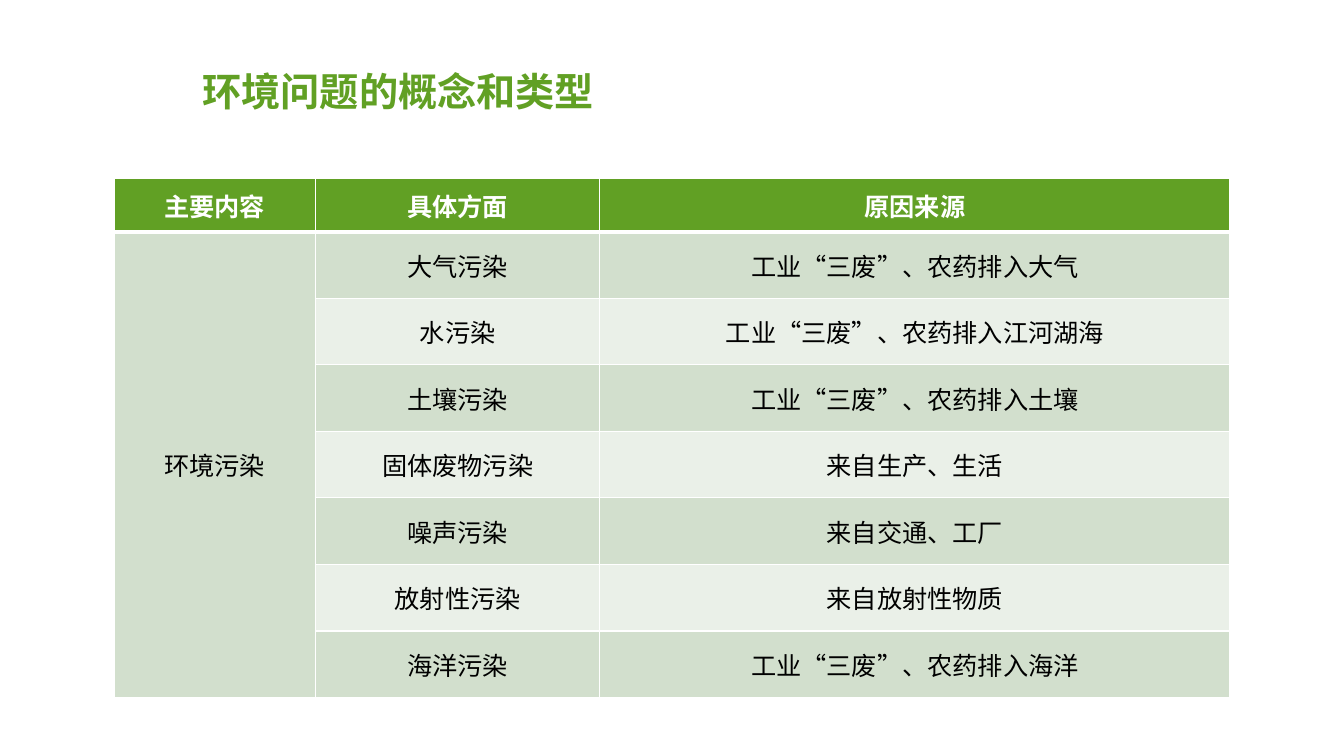
from dataclasses import dataclass

from lxml.etree import SubElement
from pptx import Presentation
from pptx.dml.color import RGBColor
from pptx.enum.text import MSO_ANCHOR, MSO_AUTO_SIZE, PP_ALIGN
from pptx.oxml.ns import qn
from pptx.slide import Slide
from pptx.table import Table, _Cell
from pptx.text.text import TextFrame
from pptx.util import Inches, Pt


@dataclass(frozen=True)
class Theme:
    font: str = "Arial"
    green: str = "61A024"
    white: str = "FFFFFF"
    black: str = "000000"
    dark: str = "D2DFCD"
    light: str = "EAF0E8"
    title: int = 28
    body: int = 18
    thin: int = 1
    thick: int = 3


@dataclass(frozen=True)
class Kind:
    name: str
    cause: str


THEME = Theme()
HEADS = ("主要内容", "具体方面", "原因来源")
GROUP = "环境污染"
KINDS = (
    Kind("大气污染", "工业“三废”、农药排入大气"),
    Kind("水污染", "工业“三废”、农药排入江河湖海"),
    Kind("土壤污染", "工业“三废”、农药排入土壤"),
    Kind("固体废物污染", "来自生产、生活"),
    Kind("噪声污染", "来自交通、工厂"),
    Kind("放射性污染", "来自放射性物质"),
    Kind("海洋污染", "工业“三废”、农药排入海洋"),
)
WIDTHS = (2, 2.82, 6.25)
HEAD_HIGH = 0.53
ROW_HIGH = 0.66


def write(frame: TextFrame, text: str, *, size: int, color: str,
          bold: bool = False, align: PP_ALIGN = PP_ALIGN.LEFT,
          space: float = 1.0) -> None:
    para = frame.paragraphs[0]
    para.alignment = align
    para.line_spacing = space
    run = para.add_run()
    run.text = text
    font = run.font
    font.name = THEME.font
    font.size = Pt(size)
    font.bold = bold
    font.color.rgb = RGBColor.from_string(color)


def edge(cell: _Cell, top: int, base: int) -> None:
    props = cell._tc.get_or_add_tcPr()
    sides = {"lnL": THEME.thin, "lnR": THEME.thin, "lnT": top, "lnB": base}
    for tag, width in sides.items():
        line = SubElement(props, qn(f"a:{tag}"), w=str(Pt(width)))
        fill = SubElement(line, qn("a:solidFill"))
        SubElement(fill, qn("a:srgbClr"), val=THEME.white)


def paint(cell: _Cell, row: int) -> None:
    edge(cell, THEME.thick if row == 1 else THEME.thin,
         THEME.thick if row == 0 else THEME.thin)
    band = THEME.dark if row % 2 else THEME.light
    cell.fill.solid()
    cell.fill.fore_color.rgb = RGBColor.from_string(band if row else THEME.green)
    cell.vertical_anchor = MSO_ANCHOR.MIDDLE


def fill_in(table: Table) -> None:
    rows = [HEADS] + [(GROUP if i == 0 else "", kind.name, kind.cause)
                      for i, kind in enumerate(KINDS)]
    for row, texts in enumerate(rows):
        for col, text in enumerate(texts):
            cell = table.cell(row, col)
            paint(cell, row)
            if text:
                write(cell.text_frame, text, size=THEME.body, bold=row == 0,
                      color=THEME.black if row else THEME.white,
                      align=PP_ALIGN.CENTER)
    table.cell(1, 0).merge(table.cell(len(KINDS), 0))


def add_title(slide: Slide) -> None:
    box = slide.shapes.add_textbox(Inches(1.91), Inches(0.48),
                                   Inches(4.13), Inches(0.65))
    frame = box.text_frame
    frame.word_wrap = False
    frame.auto_size = MSO_AUTO_SIZE.SHAPE_TO_FIT_TEXT
    write(frame, "环境问题的概念和类型", size=THEME.title,
          color=THEME.green, bold=True, space=1.3)


def add_grid(slide: Slide) -> None:
    high = HEAD_HIGH + ROW_HIGH * len(KINDS)
    table = slide.shapes.add_table(
        len(KINDS) + 1, len(HEADS), Inches(1.13), Inches(1.77),
        Inches(sum(WIDTHS)), Inches(high)).table
    for col, width in zip(table.columns, WIDTHS):
        col.width = Inches(width)
    for i, row in enumerate(table.rows):
        row.height = Inches(ROW_HIGH if i else HEAD_HIGH)
    fill_in(table)


def main() -> None:
    deck = Presentation()
    deck.slide_width = Inches(13.33)
    deck.slide_height = Inches(7.5)
    slide = deck.slides.add_slide(deck.slide_layouts[6])
    add_title(slide)
    add_grid(slide)
    deck.save("out.pptx")


if __name__ == "__main__":
    main()
